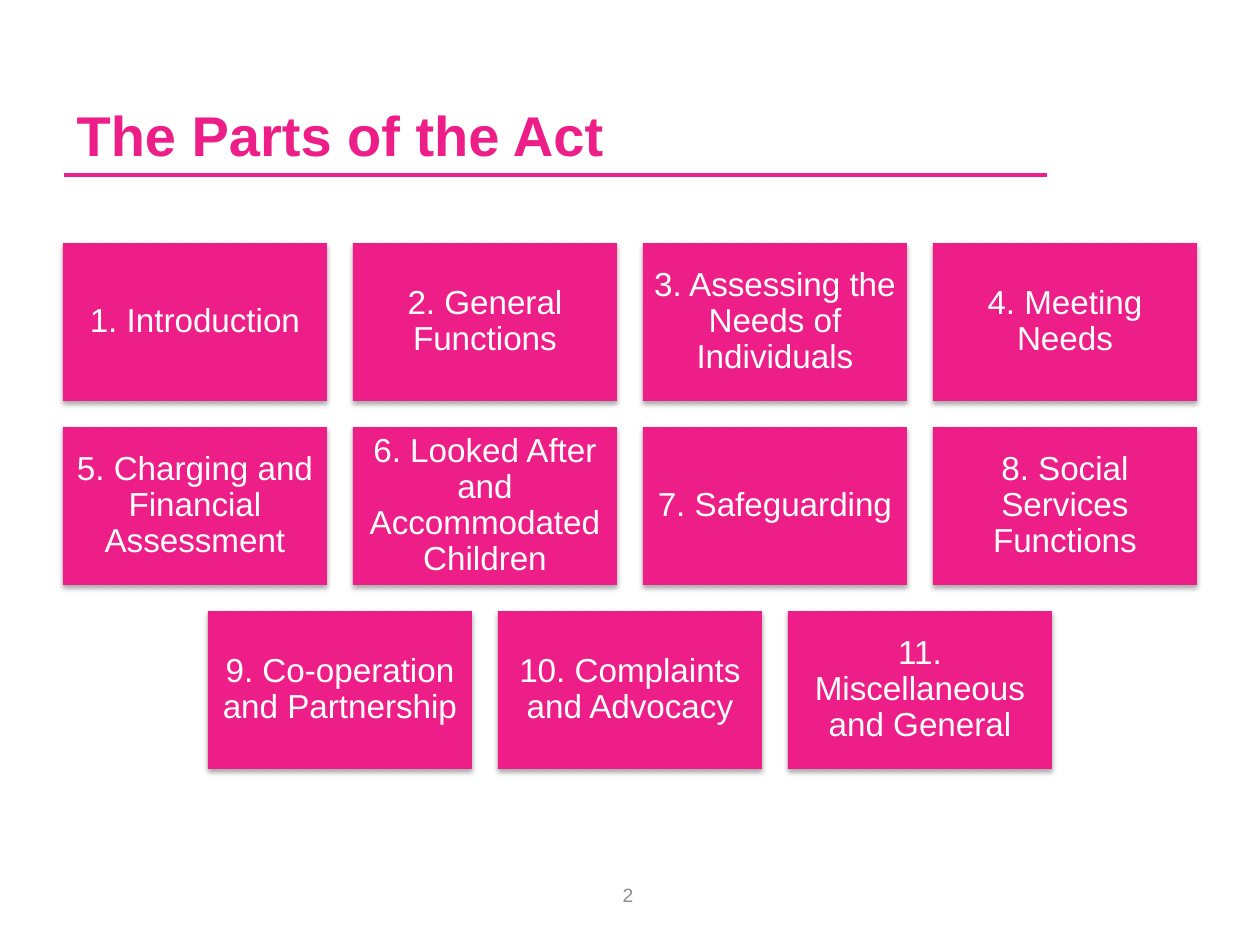
from dataclasses import dataclass

from lxml import etree
from pptx import Presentation
from pptx.dml.color import RGBColor
from pptx.enum.shapes import MSO_CONNECTOR, MSO_SHAPE
from pptx.enum.text import MSO_ANCHOR, MSO_AUTO_SIZE, PP_ALIGN
from pptx.oxml.ns import qn
from pptx.slide import Slide
from pptx.text.text import TextFrame
from pptx.util import Emu, Pt

RECTANGLE = MSO_SHAPE.RECTANGLE
STRAIGHT = MSO_CONNECTOR.STRAIGHT
LEFT, CENTER = PP_ALIGN.LEFT, PP_ALIGN.CENTER
MIDDLE, BOTTOM = MSO_ANCHOR.MIDDLE, MSO_ANCHOR.BOTTOM
NO_AUTOFIT = MSO_AUTO_SIZE.NONE

PX_PER_INCH = 126
TITLE_ONLY_LAYOUT = 5


@dataclass(frozen=True)
class Theme:
    font: str = "Arial"
    pink: RGBColor = RGBColor(0xED, 0x1E, 0x87)
    white: RGBColor = RGBColor(0xFF, 0xFF, 0xFF)
    gray: RGBColor = RGBColor(0x8C, 0x8C, 0x8C)
    title_size: int = 32
    tile_size: int = 19
    number_size: int = 11
    rule_width: int = 2


@dataclass(frozen=True)
class Box:
    left: int
    top: int
    width: int
    height: int


@dataclass(frozen=True)
class Tile:
    label: str
    box: Box


THEME = Theme()
GRID = Box(63, 243, 1134, 527)
TILE_WIDTH, TILE_HEIGHT, TILE_GAP, TILE_INSET = 264, 158, 26, 10
TITLE_BOX = Box(64, 37, 983, 137)
NUMBER_BOX = Box(481, 870, 294, 50)
RULE_TOP = 175

ROWS = (
    (
        "1. Introduction",
        "2. General Functions",
        "3. Assessing the Needs of Individuals",
        "4. Meeting Needs",
    ),
    (
        "5. Charging and Financial Assessment",
        "6. Looked After and Accommodated Children",
        "7. Safeguarding",
        "8. Social Services Functions",
    ),
    (
        "9. Co-operation and Partnership",
        "10. Complaints and Advocacy",
        "11. Miscellaneous and General",
    ),
)


def px(length: int) -> Emu:
    return Emu(round(length * 914400 / PX_PER_INCH))


def place(box: Box) -> tuple[Emu, Emu, Emu, Emu]:
    return px(box.left), px(box.top), px(box.width), px(box.height)


def lay_out_tiles() -> list[Tile]:
    tiles = []
    for row, labels in enumerate(ROWS):
        row_width = len(labels) * (TILE_WIDTH + TILE_GAP) - TILE_GAP
        row_left = GRID.left + (GRID.width - row_width) // 2
        top = GRID.top + row * (TILE_HEIGHT + TILE_GAP)
        for column, label in enumerate(labels):
            left = row_left + column * (TILE_WIDTH + TILE_GAP)
            tiles.append(Tile(label, Box(left, top, TILE_WIDTH, TILE_HEIGHT)))
    return tiles


def write_text(
    text_frame: TextFrame,
    text: str,
    size: int,
    color: RGBColor,
    alignment: PP_ALIGN = CENTER,
    anchor: MSO_ANCHOR = MIDDLE,
    bold: bool = False,
) -> None:
    text_frame.text = text
    text_frame.word_wrap = True
    text_frame.auto_size = NO_AUTOFIT
    text_frame.vertical_anchor = anchor
    paragraph = text_frame.paragraphs[0]
    paragraph.alignment = alignment
    font = paragraph.runs[0].font
    font.name = THEME.font
    font.size = Pt(size)
    font.bold = bold
    font.color.rgb = color


def add_title(slide: Slide, text: str) -> None:
    title = slide.shapes.title
    title.left, title.top, title.width, title.height = place(TITLE_BOX)
    write_text(title.text_frame, text, THEME.title_size, THEME.pink, LEFT, BOTTOM, True)


def add_rule(slide: Slide) -> None:
    right = TITLE_BOX.left + TITLE_BOX.width
    rule = slide.shapes.add_connector(
        STRAIGHT, px(TITLE_BOX.left), px(RULE_TOP), px(right), px(RULE_TOP)
    )
    rule.line.color.rgb = THEME.pink
    rule.line.width = Pt(THEME.rule_width)
    etree.SubElement(rule._element.spPr, qn("a:effectLst"))


def add_tile(slide: Slide, tile: Tile) -> None:
    shape = slide.shapes.add_shape(RECTANGLE, *place(tile.box))
    shape.fill.solid()
    shape.fill.fore_color.rgb = THEME.pink
    shape.line.fill.background()
    shape.shadow.inherit = False
    effects = shape._element.spPr.find(qn("a:effectLst"))
    shadow = etree.SubElement(
        effects,
        qn("a:outerShdw"),
        blurRad=str(Pt(3.1)),
        dist=str(Pt(1.8)),
        dir="5400000",
        rotWithShape="0",
    )
    shadow_color = etree.SubElement(shadow, qn("a:srgbClr"), val="000000")
    etree.SubElement(shadow_color, qn("a:alpha"), val="35000")

    text_frame = shape.text_frame
    text_frame.margin_left = text_frame.margin_right = px(TILE_INSET)
    text_frame.margin_top = text_frame.margin_bottom = px(TILE_INSET)
    write_text(text_frame, tile.label, THEME.tile_size, THEME.white)
    text_frame.paragraphs[0].line_spacing = 0.9


def add_slide_number(slide: Slide, number: int) -> None:
    text_box = slide.shapes.add_textbox(*place(NUMBER_BOX))
    write_text(text_box.text_frame, str(number), THEME.number_size, THEME.gray)


def main() -> None:
    presentation = Presentation()
    presentation.slide_width = px(1260)
    presentation.slide_height = px(945)
    slide = presentation.slides.add_slide(presentation.slide_layouts[TITLE_ONLY_LAYOUT])
    add_title(slide, "The Parts of the Act")
    add_rule(slide)
    for tile in lay_out_tiles():
        add_tile(slide, tile)
    add_slide_number(slide, 2)
    presentation.save("out.pptx")


if __name__ == "__main__":
    main()
